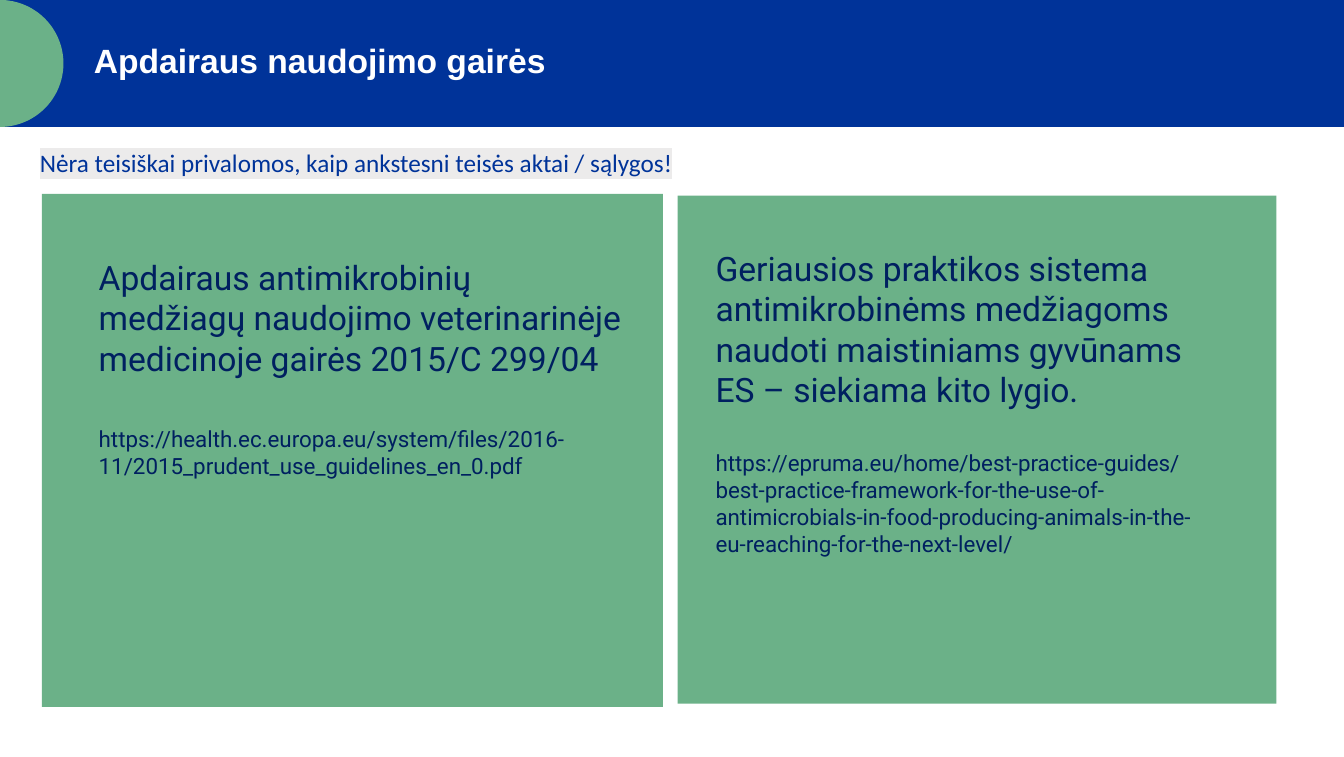
import math

from lxml import etree
from pptx import Presentation
from pptx.dml.color import RGBColor
from pptx.enum import shapes, text
from pptx.oxml.ns import qn
from pptx.util import Pt

HUES = {"blue": "003399", "green": "6BB188", "navy": "002060",
        "white": "FFFFFF", "grey": "ECEBEB"}
WIDE, HIGH, BAND = 960, 540.72, 90.72


def paint(shape, hue):
    shape.shadow.inherit = False
    shape.fill.solid()
    shape.fill.fore_color.rgb = RGBColor.from_string(HUES[hue])
    shape.line.fill.background()


def add_box(slide, left, top, width, height, hue):
    box = slide.shapes.add_shape(shapes.MSO_SHAPE.RECTANGLE,
                                 Pt(left), Pt(top), Pt(width), Pt(height))
    paint(box, hue)


def add_dome(slide, size, hue):
    """Half disc on the left edge, bulging to the right."""
    half = size / 2
    turns = [math.radians(deg) for deg in range(-90, 91, 2)]
    points = [(Pt(half * math.cos(turn)), Pt(half + half * math.sin(turn)))
              for turn in turns]
    build = slide.shapes.build_freeform(*points[0])
    build.add_line_segments(points[1:], close=True)
    paint(build.convert_to_shape(), hue)


def add_frame(slide, left, top, width, height):
    box = slide.shapes.add_textbox(Pt(left), Pt(top), Pt(width), Pt(height))
    frame = box.text_frame
    frame.word_wrap = True
    return frame


def add_run(para, words, size, face, hue, bold=False):
    run = para.add_run()
    run.text = words
    font = run.font
    font.size, font.name, font.bold = Pt(size), face, bold
    font.color.rgb = RGBColor.from_string(HUES[hue])
    return run


def mark(run, hue):
    """Highlight the run; the element must follow the text fill."""
    light = etree.Element(qn("a:highlight"))
    etree.SubElement(light, qn("a:srgbClr")).set("val", HUES[hue])
    run.font._element.find(qn("a:solidFill")).addnext(light)


def add_guide(slide, panel, place, title, link, gap):
    add_box(slide, *panel, "green")
    frame = add_frame(slide, *place)
    add_run(frame.paragraphs[0], title, 24, "Roboto", "navy")
    para = frame.add_paragraph()
    para.space_before = Pt(gap)
    add_run(para, link, 16, "Roboto", "navy")


def main():
    deck = Presentation()
    deck.slide_width, deck.slide_height = Pt(WIDE), Pt(HIGH)
    slide = deck.slides.add_slide(deck.slide_layouts[6])

    add_box(slide, 0, 0, WIDE, BAND, "blue")
    add_dome(slide, BAND, "green")
    head = add_frame(slide, 60, 24.5, 762, 37.4)
    head.vertical_anchor = text.MSO_ANCHOR.MIDDLE
    add_run(head.paragraphs[0], "Apdairaus naudojimo gairės",
            24, "Arial", "white", True)

    add_guide(slide, (30, 138.5, 443.5, 366.5), (63.4, 180, 390.2, 216),
              "Apdairaus antimikrobinių medžiagų naudojimo veterinarinėje "
              "medicinoje gairės 2015/C 299/04",
              "https://health.ec.europa.eu/system/files/2016-11/"
              "2015_prudent_use_guidelines_en_0.pdf", 33.5)
    add_guide(slide, (484, 139.8, 427.7, 362.8), (504, 173.5, 365.8, 230.4),
              "Geriausios praktikos sistema antimikrobinėms medžiagoms "
              "naudoti maistiniams gyvūnams ES – siekiama kito lygio.",
              "https://epruma.eu/home/best-practice-guides/"
              "best-practice-framework-for-the-use-of-antimicrobials-in-"
              "food-producing-animals-in-the-eu-reaching-for-the-next-level/",
              28.8)

    note = add_frame(slide, 21.4, 101.5, 602.6, 29)
    run = add_run(note.paragraphs[0],
                  "Nėra teisiškai privalomos, kaip ankstesni teisės aktai "
                  "/ sąlygos!", 18, "Calibri", "blue")
    mark(run, "grey")
    deck.save("out.pptx")


if __name__ == "__main__":
    main()
